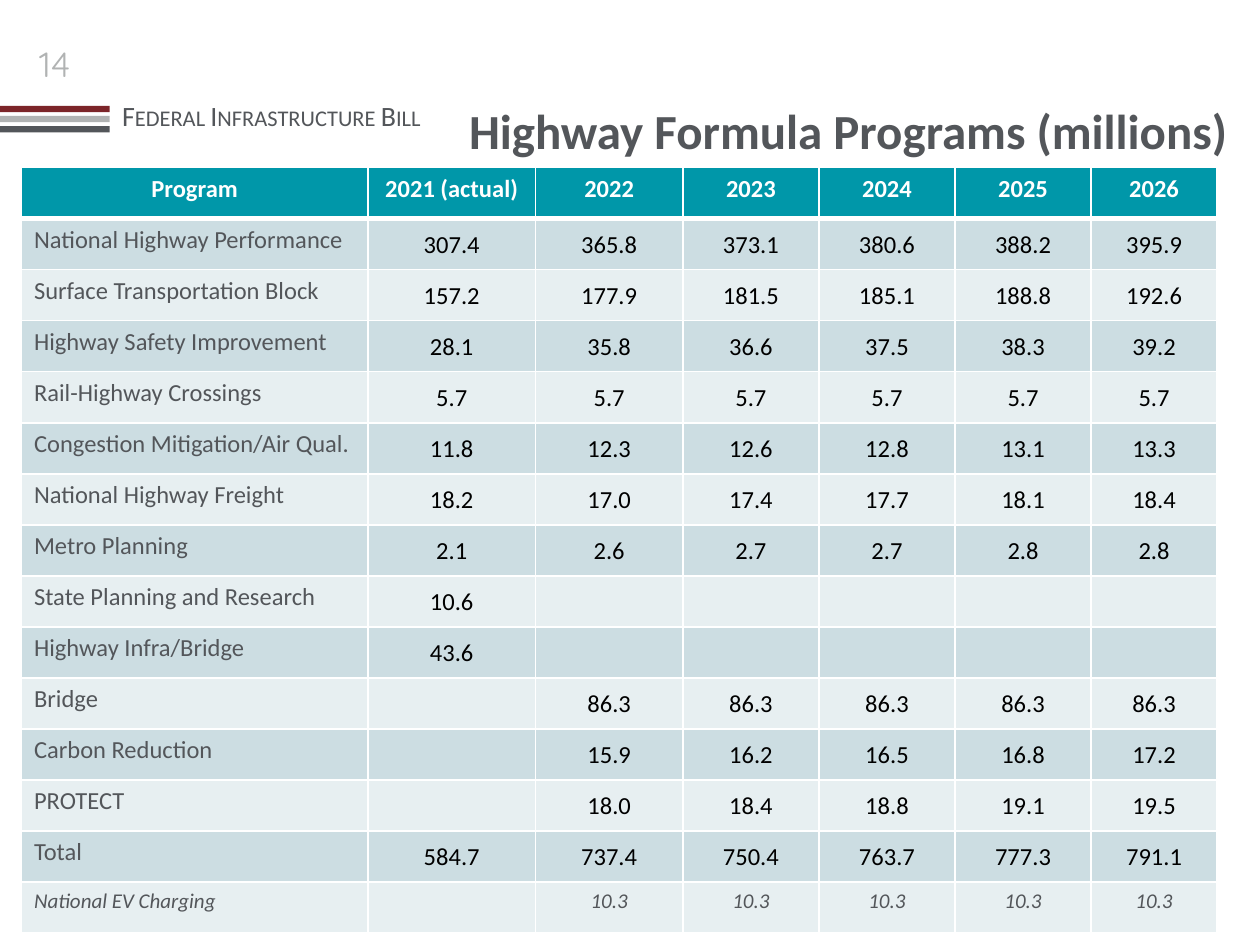
import pptx
import pptx.dml.color
import pptx.enum.shapes
import pptx.enum.text
import pptx.oxml
import pptx.oxml.ns
import pptx.util

Inches = pptx.util.Inches
Pt = pptx.util.Pt
RGBColor = pptx.dml.color.RGBColor
CENTER = pptx.enum.text.PP_ALIGN.CENTER
MIDDLE = pptx.enum.text.MSO_ANCHOR.MIDDLE

WHITE = RGBColor(0xFF, 0xFF, 0xFF)
BLACK = RGBColor(0x00, 0x00, 0x00)
GRAPHITE = RGBColor(0x53, 0x56, 0x5A)
SILVER = RGBColor(0xB1, 0xB3, 0xB3)
MAROON = RGBColor(0x7C, 0x25, 0x29)
TEAL = RGBColor(0x00, 0x97, 0xA9)
BANDS = [RGBColor(0xE7, 0xEF, 0xF1), RGBColor(0xCC, 0xDD, 0xE2)]

PROGRAMS = [
    ["Program", "2021 (actual)", "2022", "2023", "2024", "2025", "2026"],
    ["National Highway Performance", "307.4", "365.8", "373.1", "380.6", "388.2", "395.9"],
    ["Surface Transportation Block", "157.2", "177.9", "181.5", "185.1", "188.8", "192.6"],
    ["Highway Safety Improvement", "28.1", "35.8", "36.6", "37.5", "38.3", "39.2"],
    ["Rail-Highway Crossings", "5.7", "5.7", "5.7", "5.7", "5.7", "5.7"],
    ["Congestion Mitigation/Air Qual.", "11.8", "12.3", "12.6", "12.8", "13.1", "13.3"],
    ["National Highway Freight", "18.2", "17.0", "17.4", "17.7", "18.1", "18.4"],
    ["Metro Planning", "2.1", "2.6", "2.7", "2.7", "2.8", "2.8"],
    ["State Planning and Research", "10.6", "", "", "", "", ""],
    ["Highway Infra/Bridge", "43.6", "", "", "", "", ""],
    ["Bridge", "", "86.3", "86.3", "86.3", "86.3", "86.3"],
    ["Carbon Reduction", "", "15.9", "16.2", "16.5", "16.8", "17.2"],
    ["PROTECT", "", "18.0", "18.4", "18.8", "19.1", "19.5"],
    ["Total", "584.7", "737.4", "750.4", "763.7", "777.3", "791.1"],
    ["National EV Charging", "", "10.3", "10.3", "10.3", "10.3", "10.3"],
]
COLUMN_WIDTHS = [2.75, 1.33, 1.17, 1.08, 1.08, 1.08, 1]
TABLE_HEIGHT = 6.08


def write_text(text_frame, text, size, color, name="Calibri", bold=False, italic=False, align=None):
    paragraph = text_frame.paragraphs[0]
    run = paragraph.add_run()
    run.text = text
    paragraph.alignment = align
    font = paragraph.font
    font.name, font.size, font.bold, font.italic = name, Pt(size), bold, italic
    font.color.rgb = color
    return run


def add_borders(cell, bottom_width):
    properties = cell._tc.get_or_add_tcPr()
    widths = {"lnL": 1, "lnR": 1, "lnT": 1, "lnB": bottom_width}
    for index, (side, width) in enumerate(widths.items()):
        properties.insert(index, pptx.oxml.parse_xml(
            f'<a:{side} {pptx.oxml.ns.nsdecls("a")} w="{Pt(width)}">'
            f'<a:solidFill><a:srgbClr val="{WHITE}"/></a:solidFill></a:{side}>'))


presentation = pptx.Presentation()
presentation.slide_width = Inches(10)
presentation.slide_height = Inches(7.5)
slide = presentation.slides.add_slide(presentation.slide_layouts[5])

section = slide.shapes.add_textbox(Inches(0.87), Inches(0.73), Inches(5.38), Inches(0.37))
section.text_frame.word_wrap = True
section_run = write_text(section.text_frame, "Federal Infrastructure Bill", 16, GRAPHITE)
section_run._r.get_or_add_rPr().set("cap", "small")

for index, color in enumerate([MAROON, SILVER, GRAPHITE]):
    stripe = slide.shapes.add_shape(
        pptx.enum.shapes.MSO_SHAPE.RECTANGLE,
        0, Inches(0.84 + index * 0.08), Inches(0.87), Inches(0.05))
    stripe.shadow.inherit = False
    stripe.fill.solid()
    stripe.fill.fore_color.rgb = color
    stripe.line.fill.background()

page_number = slide.shapes.add_textbox(0, Inches(0.29), Inches(0.87), Inches(0.44))
page_number.text_frame.word_wrap = True
write_text(page_number.text_frame, "14", 20, SILVER, name="Quicksand", align=CENTER)

title = slide.shapes.title
title.left, title.top = Inches(2.42), Inches(0.5)
title.width, title.height = Inches(8.62), Inches(1.06)
title.text_frame.vertical_anchor = MIDDLE
write_text(title.text_frame, "Highway Formula Programs (millions)", 28, GRAPHITE,
           bold=True, align=CENTER)

table = slide.shapes.add_table(
    len(PROGRAMS), len(COLUMN_WIDTHS), Inches(0.17), Inches(1.33),
    Inches(sum(COLUMN_WIDTHS)), Inches(TABLE_HEIGHT)).table
for column, width in zip(table.columns, COLUMN_WIDTHS):
    column.width = Inches(width)

for row_index, values in enumerate(PROGRAMS):
    is_header = row_index == 0
    is_footnote = row_index == len(PROGRAMS) - 1
    table.rows[row_index].height = Inches(TABLE_HEIGHT / len(PROGRAMS))
    for column_index, value in enumerate(values):
        cell = table.cell(row_index, column_index)
        cell.fill.solid()
        cell.fill.fore_color.rgb = TEAL if is_header else BANDS[row_index % 2]
        add_borders(cell, 3 if is_header else 1)
        if not value:
            continue
        is_label = column_index == 0
        is_amount = not (is_header or is_footnote or is_label)
        if is_amount:
            cell.vertical_anchor = MIDDLE
            cell.margin_left = cell.margin_top = cell.margin_right = Inches(0.01)
            cell.margin_bottom = 0
        write_text(cell.text_frame, value, 12 if is_footnote else 14,
                   WHITE if is_header else BLACK if is_amount else GRAPHITE,
                   bold=is_header, italic=is_footnote,
                   align=None if is_label and not is_header else CENTER)

presentation.save("out.pptx")
